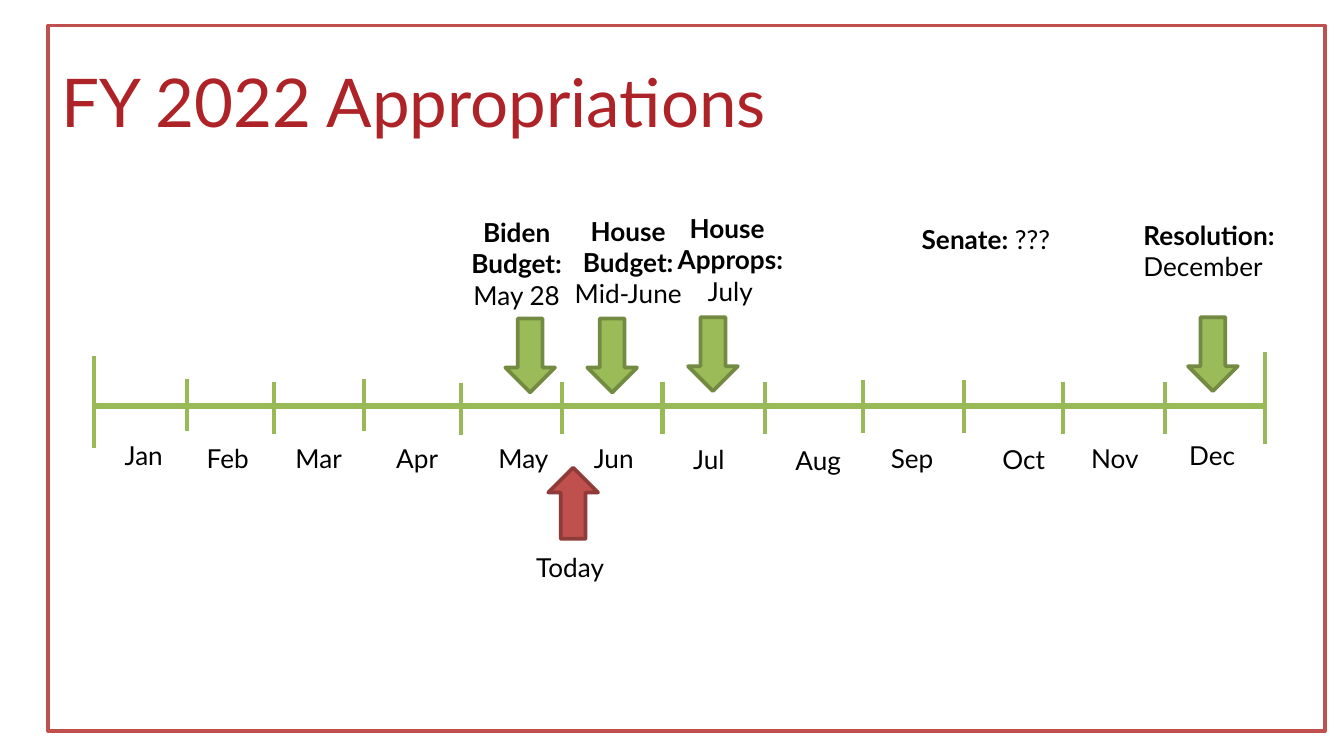
from pptx import Presentation
from pptx.dml.color import RGBColor
from pptx.enum.shapes import MSO_CONNECTOR, MSO_SHAPE
from pptx.enum.text import PP_ALIGN
from pptx.oxml.ns import qn
from pptx.util import Inches, Pt
from lxml.etree import SubElement

WHITE = RGBColor(0xFF, 0xFF, 0xFF)
BLACK = RGBColor(0, 0, 0)
CRIMSON = RGBColor(0xAD, 0x23, 0x27)
RED = RGBColor(0xC0, 0x50, 0x4D)
MAROON = RGBColor(0x8E, 0x3B, 0x39)
GREEN = RGBColor(0x9B, 0xBB, 0x59)
OLIVE = RGBColor(0x73, 0x8A, 0x42)
AXIS = RGBColor(0x98, 0xB9, 0x55)
FONT = "Lato"
LEFT, CENTER = PP_ALIGN.LEFT, PP_ALIGN.CENTER

# Month name, then label left and top, relative to the timeline box
MONTHS = [
    ("Jan", 0.13, 0.6), ("Feb", 0.74, 0.62), ("Mar", 1.4, 0.62),
    ("Apr", 2.15, 0.62), ("May", 2.91, 0.62), ("Jun", 3.62, 0.62),
    ("Jul", 4.36, 0.63), ("Aug", 5.12, 0.64), ("Sep", 5.83, 0.62),
    ("Oct", 6.66, 0.63), ("Nov", 7.32, 0.62), ("Dec", 8.05, 0.6),
]
# Month boundaries: position along the axis and top of the tick
TICKS = [
    (0.69, 0.2), (1.34, 0.22), (2.01, 0.2), (2.73, 0.23), (3.48, 0.22),
    (4.23, 0.22), (4.99, 0.22), (5.72, 0.21), (6.47, 0.21), (7.21, 0.22),
    (7.97, 0.22),
]
# Event: paragraphs of (text, bold) runs, alignment,
# caption left, top, width, height, then arrow left and top
EVENTS = [
    ([[("Biden Budget: ", True), ("May 28", False)]], CENTER,
     2.63, 0.01, 1.03, 0.81, 3.06, 0.82),
    ([[("House", True)], [("Budget:", True)], [("Mid-June", False)]], CENTER,
     3.46, 0, 1.03, 0.81, 3.67, 0.82),
    ([[("House ", True)], [("Approps: ", True), ("July", False)]], CENTER,
     4.22, -0.02, 1.03, 0.81, 4.42, 0.81),
    ([[("Resolution: ", True), ("December", False)]], LEFT,
     7.71, 0.03, 1.2, 0.57, 8.14, 0.81),
]


def add_shape(slide, kind, x, y, w, h, fill, edge):
    shape = slide.shapes.add_shape(
        kind, Inches(x), Inches(y), Inches(w), Inches(h))
    shape.shadow.inherit = False
    shape.fill.solid()
    shape.fill.fore_color.rgb = fill
    shape.line.color.rgb = edge
    shape.line.width = Pt(2)


def add_line(slide, x1, y1, x2, y2, width=2.25):
    line = slide.shapes.add_connector(
        MSO_CONNECTOR.STRAIGHT, Inches(x1), Inches(y1), Inches(x2), Inches(y2))
    line.line.color.rgb = AXIS
    line.line.width = Pt(width)
    SubElement(line._element.spPr, qn("a:effectLst"))


def add_text(slide, paras, x, y, w, h, size=14, color=BLACK, align=LEFT):
    """Each paragraph is a list of (text, bold) runs."""
    box = slide.shapes.add_textbox(
        Inches(x), Inches(y), Inches(w), Inches(h))
    frame = box.text_frame
    frame.word_wrap = True
    for i, runs in enumerate(paras):
        para = frame.add_paragraph() if i else frame.paragraphs[0]
        para.alignment = align
        for text, bold in runs:
            run = para.add_run()
            run.text = text
            run.font.name = FONT
            run.font.size = Pt(size)
            run.font.bold = bold
            run.font.color.rgb = color


def add_frame(slide, x, y, w, h):
    # Border and title
    add_shape(slide, MSO_SHAPE.RECTANGLE, x, y, w, h, WHITE, RED)
    add_text(slide, [[("FY 2022 Appropriations", False)]],
             x, y + 0.21, 8.56, 0.71, 36, CRIMSON)


def add_axis(slide, x, y, w, h):
    # Main line with taller end marks
    mid = y + 0.4
    add_line(slide, x, mid, x + w, mid, 3)
    for end, top in ((x, y + 0.03), (x + w, y)):
        add_line(slide, end, top, end, top + h)
    for dx, top in TICKS:
        add_line(slide, x + dx, y + top, x + dx, y + top + 0.39)
    # Month labels
    for name, dx, dy in MONTHS:
        add_text(slide, [[(name, False)]], x + dx, y + dy, 0.76, 0.34)


def add_events(slide, x, y):
    # Captions with arrows pointing down to the axis
    for paras, align, dx, dy, w, h, left, top in EVENTS:
        add_shape(slide, MSO_SHAPE.DOWN_ARROW, x + left, y + top,
                  0.37, 0.55, GREEN, OLIVE)
        add_text(slide, paras, x + dx, y + dy, w, h, align=align)
    add_text(slide, [[("Senate:", True), (" ???", False)]],
             x + 6.06, y + 0.06, 1.2, 0.34)


def add_today(slide, x, y):
    add_shape(slide, MSO_SHAPE.UP_ARROW, x + 0.19, y, 0.37, 0.53, RED, MAROON)
    add_text(slide, [[("Today", False)]], x, y + 0.57, 1.03, 0.34)


def main():
    prs = Presentation()
    # Widescreen, 16 to 9
    prs.slide_width = Inches(10)
    prs.slide_height = prs.slide_width * 9 // 16
    slide = prs.slides.add_slide(prs.slide_layouts[6])
    add_frame(slide, 0.36, 0.19, 9.5, 5.25)
    add_axis(slide, 0.7, 2.62, 8.71, 0.68)
    add_events(slide, 0.7, 1.55)
    add_today(slide, 3.89, 3.48)
    prs.save("out.pptx")


if __name__ == "__main__":
    main()
